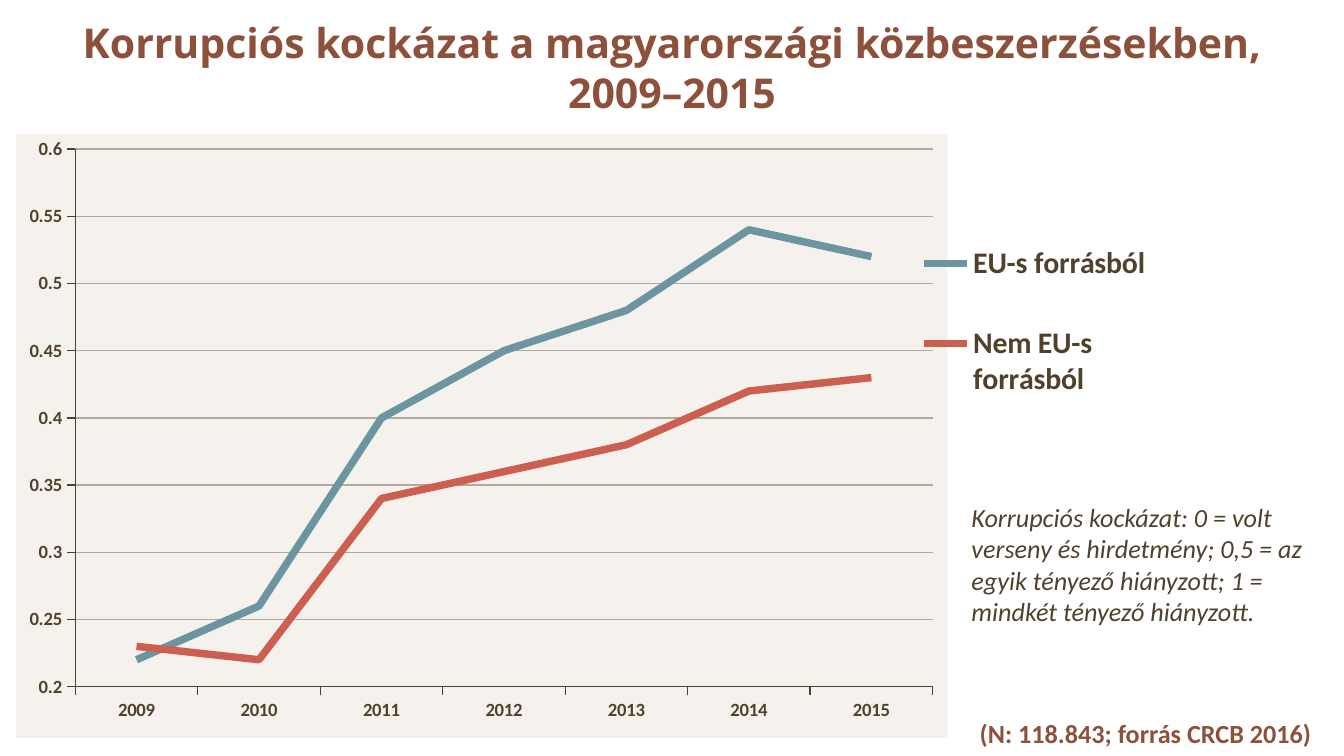
from lxml import etree
from pptx import Presentation
from pptx.chart.data import CategoryChartData
from pptx.dml.color import RGBColor
from pptx.enum.chart import XL_CHART_TYPE, XL_LEGEND_POSITION, XL_TICK_MARK
from pptx.enum.shapes import MSO_SHAPE
from pptx.enum.text import MSO_ANCHOR, MSO_AUTO_SIZE, PP_ALIGN
from pptx.oxml.ns import qn
from pptx.util import Inches, Pt

LINE_CHART = XL_CHART_TYPE.LINE
LEGEND_RIGHT = XL_LEGEND_POSITION.RIGHT
TICK_OUTSIDE = XL_TICK_MARK.OUTSIDE
RECTANGLE = MSO_SHAPE.RECTANGLE
MIDDLE = MSO_ANCHOR.MIDDLE
NO_FIT, GROW = MSO_AUTO_SIZE.NONE, MSO_AUTO_SIZE.SHAPE_TO_FIT_TEXT
LEFT, CENTER = PP_ALIGN.LEFT, PP_ALIGN.CENTER

COLORS = {
    "panel": "EFEAE4",
    "text": "50412B",
    "accent": "8D503B",
    "grid": "B3AA9D",
    "eu": "6B95A1",
    "non_eu": "CD5F50",
}
YEARS = [str(year) for year in range(2009, 2016)]
SERIES = [
    ("EU-s forrásból", "eu", (0.22, 0.26, 0.4, 0.45, 0.48, 0.54, 0.52)),
    ("Nem EU-s forrásból", "non_eu", (0.23, 0.22, 0.34, 0.36, 0.38, 0.42, 0.43)),
]


def rgb(name):
    return RGBColor.from_string(COLORS[name])


def format_font(font, size, color="text", name="Calibri", bold=False, italic=False):
    font.size, font.name = Pt(size), name
    font.bold, font.italic = bold, italic
    font.color.rgb = rgb(color)


def write_text(frame, text, align=LEFT, **font_format):
    para = frame.paragraphs[0]
    para.alignment = align
    span = para.add_run()
    span.text = text
    format_font(span.font, **font_format)


def format_line(line, color, width):
    line.color.rgb = rgb(color)
    line.width = Pt(width)


def set_layout(part, chart_size, left, top, width, height, inner=False):
    """Fix a chart part's place, given in inches within the chart."""
    layout = part.find(qn("c:layout"))
    if layout is None:
        layout = etree.Element(qn("c:layout"))
        legend_position = part.find(qn("c:legendPos"))
        if legend_position is None:
            part.insert(0, layout)
        else:
            legend_position.addnext(layout)
    manual = etree.SubElement(layout, qn("c:manualLayout"))
    chart_width, chart_height = chart_size
    settings = [("layoutTarget", "inner")] if inner else []
    settings += [("xMode", "edge"), ("yMode", "edge"),
                 ("x", left / chart_width), ("y", top / chart_height),
                 ("w", width / chart_width), ("h", height / chart_height)]
    for tag, value in settings:
        etree.SubElement(manual, qn(f"c:{tag}")).set("val", str(value))


class SlideBuilder:
    def __init__(self, page):
        self.page = page

    def title(self, text, left, top, width, height):
        box = self.page.shapes.title
        box.left, box.top = Inches(left), Inches(top)
        box.width, box.height = Inches(width), Inches(height)
        frame = box.text_frame
        frame.auto_size, frame.vertical_anchor = NO_FIT, MIDDLE
        write_text(frame, text, align=CENTER, size=22, color="accent",
                   name="Open Sans", bold=True)

    def panel(self, left, top, width, height, opacity):
        box = self.page.shapes.add_shape(
            RECTANGLE, Inches(left), Inches(top), Inches(width), Inches(height))
        box.shadow.inherit = False
        box.fill.solid()
        box.fill.fore_color.rgb = rgb("panel")
        box.line.fill.background()
        color = box.fill._xPr.find(".//" + qn("a:srgbClr"))
        etree.SubElement(color, qn("a:alpha")).set("val", str(opacity * 1000))

    def text(self, text, left, top, width, height, **text_format):
        box = self.page.shapes.add_textbox(
            Inches(left), Inches(top), Inches(width), Inches(height))
        box.text_frame.word_wrap = True
        box.text_frame.auto_size = GROW
        write_text(box.text_frame, text, **text_format)

    def line_chart(self, left, top, width, height):
        data = CategoryChartData()
        data.categories = YEARS
        for name, _, values in SERIES:
            data.add_series(name, values)
        chart = self.page.shapes.add_chart(
            LINE_CHART, Inches(left), Inches(top), Inches(width), Inches(height), data).chart
        chart.has_title = False
        format_font(chart.font, size=10, bold=True)

        for series, (_, color, _) in zip(chart.plots[0].series, SERIES):
            series.smooth = False
            format_line(series.format.line, color, 4)

        for axis in (chart.category_axis, chart.value_axis):
            axis.major_tick_mark = TICK_OUTSIDE
            format_line(axis.format.line, "text", 0.75)
            format_font(axis.tick_labels.font, size=10, bold=True)
        value_axis = chart.value_axis
        value_axis.minimum_scale, value_axis.maximum_scale = 0.2, 0.6
        value_axis.major_unit = 0.05
        format_line(value_axis.major_gridlines.format.line, "grid", 0.75)

        chart.has_legend = True
        chart.legend.position = LEGEND_RIGHT
        chart.legend.include_in_layout = False
        format_font(chart.legend.font, size=16, bold=True)
        plot_area = chart._chartSpace.find(".//" + qn("c:plotArea"))
        legend = chart._chartSpace.find(".//" + qn("c:legend"))
        set_layout(plot_area, (width, height), 0.44, 0.09, 6.38, 4, inner=True)
        set_layout(legend, (width, height), 6.69, 0.48, 1.78, 1.79)


def main():
    deck = Presentation()
    deck.slide_width = Inches(10)
    deck.slide_height = deck.slide_width * 9 // 16
    slide = SlideBuilder(deck.slides.add_slide(deck.slide_layouts[5]))

    slide.panel(0.12, 1, 6.93, 4.49, opacity=60)
    slide.line_chart(0.12, 1.02, 8.5, 4.37)
    slide.text("Korrupciós kockázat: 0 = volt verseny és hirdetmény; 0,5 = az egyik "
               "tényező hiányzott; 1 = mindkét tényező hiányzott.",
               7.13, 3.68, 2.76, 1.04, size=14, italic=True)
    slide.title("Korrupciós kockázat a magyarországi közbeszerzésekben, 2009–2015",
                0.12, 0, 9.76, 1)
    slide.text("(N: 118.843; forrás CRCB 2016)", 7.05, 5.29, 2.95, 0.34,
               align=CENTER, size=14, color="accent", bold=True)
    deck.save("out.pptx")


if __name__ == "__main__":
    main()
